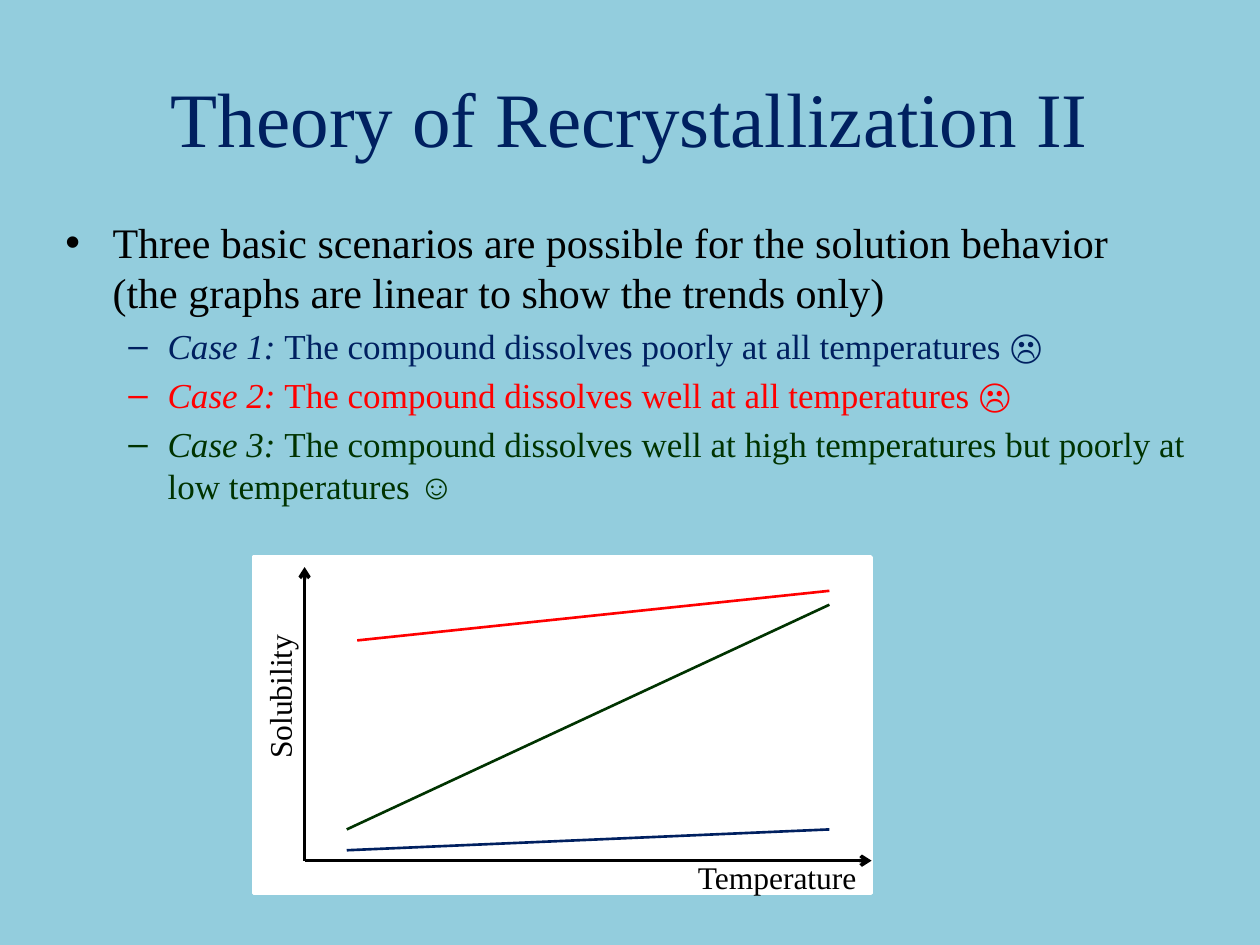
from dataclasses import dataclass

from lxml import etree
from pptx import Presentation
from pptx import util as u
from pptx.dml.color import RGBColor
from pptx.enum import shapes, text
from pptx.oxml import ns

SKY = RGBColor(0x93, 0xCD, 0xDD)
WHITE = RGBColor(0xFF, 0xFF, 0xFF)
BLACK = RGBColor(0, 0, 0)
NAVY = RGBColor(0x00, 0x20, 0x60)
RED = RGBColor(0xFF, 0, 0)
GREEN = RGBColor(0, 0x33, 0)
FONT = "Times New Roman"


@dataclass
class Line:
    """A straight line; lengths in centimetres, width in points."""
    start: tuple[float, float]
    end: tuple[float, float]
    color: RGBColor
    width: float = 1.5
    arrow: bool = False


@dataclass
class Label:
    """A text box; lengths in centimetres, size in points."""
    words: str
    area: tuple[float, float, float, float]
    size: float = 18
    color: RGBColor = BLACK
    rotation: float = 0
    wrap: bool = False


@dataclass
class Case:
    name: str
    outcome: str
    color: RGBColor


ORIGIN = (6.14, 17.35)
AXES = [
    Line(ORIGIN, (6.14, 11.43), BLACK, 2, True),
    Line(ORIGIN, (17.57, 17.35), BLACK, 2, True),
]
CURVES = [
    Line((6.99, 17.14), (16.72, 16.72), NAVY),
    Line((7.2, 12.91), (16.72, 11.91), RED),
    Line((6.99, 16.72), (16.72, 12.19), GREEN),
]
AXIS_LABELS = [
    Label("Solubility", (4.11, 13.51, 3.05, 1.02), rotation=270),
    Label("Temperature", (13.82, 17.17, 3.73, 1.02)),
]
TITLE = Label("Theory of Recrystallization II", (1.27, 0.76, 22.86, 3.18), 44, NAVY, wrap=True)
INTRO = Label(
    "Three basic scenarios are possible for the solution behavior \v"
    "(the graphs are linear to show the trends only)",
    (1.07, 4.24, 23.5, 12.7), 24, wrap=True)
CASES = [
    Case("Case 1: ", "The compound dissolves poorly at all temperatures ☹", NAVY),
    Case("Case 2: ", "The compound dissolves well at all temperatures ☹", RED),
    Case("Case 3: ", "The compound dissolves well at high temperatures "
         "but poorly at low temperatures ☺", GREEN),
]


def style_run(span, size: float, color: RGBColor, italic: bool = False) -> None:
    span.font.name = FONT
    span.font.size = u.Pt(size)
    span.font.color.rgb = color
    span.font.italic = italic


def add_label(page, label: Label):
    box = page.shapes.add_textbox(*map(u.Cm, label.area))
    box.rotation = label.rotation
    frame = box.text_frame
    frame.word_wrap = label.wrap
    frame.text = label.words
    for span in frame.paragraphs[0].runs:
        style_run(span, label.size, label.color)
    return box


def add_bullet(para, mark: str, left: float, hang: float, size: float) -> None:
    """Give the paragraph a bullet, a hanging indent and 20% space before."""
    para.space_before = u.Pt(0.2 * size)
    props = para._p.get_or_add_pPr()
    props.set("marL", str(u.Cm(left)))
    props.set("indent", str(-u.Cm(hang)))
    etree.SubElement(props, ns.qn("a:buFont")).set("typeface", "Arial")
    etree.SubElement(props, ns.qn("a:buChar")).set("char", mark)


def add_case(frame, case: Case) -> None:
    para = frame.add_paragraph()
    para.level = 1
    para.text = case.name
    para.add_run().text = case.outcome
    for span, italic in zip(para.runs, (True, False)):
        style_run(span, 20, case.color, italic)
    add_bullet(para, "–", 2.06, 0.79, 20)


def add_line(page, line: Line) -> None:
    connector = page.shapes.add_connector(
        shapes.MSO_CONNECTOR.STRAIGHT, *map(u.Cm, line.start + line.end))
    connector.line.color.rgb = line.color
    connector.line.width = u.Pt(line.width)
    if line.arrow:
        outline = connector.line._get_or_add_ln()
        etree.SubElement(outline, ns.qn("a:tailEnd")).set("type", "arrow")
    etree.SubElement(connector._element.spPr, ns.qn("a:effectLst"))


def add_graph_panel(page) -> None:
    panel = page.shapes.add_shape(
        shapes.MSO_SHAPE.RECTANGLE, *map(u.Cm, (5.11, 11.23, 12.45, 6.78)))
    panel.shadow.inherit = False
    panel.fill.solid()
    panel.fill.fore_color.rgb = WHITE
    panel.line.color.rgb = WHITE
    panel.line.width = u.Pt(2)


def main() -> None:
    deck = Presentation()
    deck.slide_width, deck.slide_height = u.Cm(25.4), u.Cm(19.05)
    page = deck.slides.add_slide(deck.slide_layouts[6])
    page.background.fill.solid()
    page.background.fill.fore_color.rgb = SKY

    add_graph_panel(page)

    title = add_label(page, TITLE).text_frame
    title.vertical_anchor = text.MSO_ANCHOR.MIDDLE
    title.paragraphs[0].alignment = text.PP_ALIGN.CENTER

    body = add_label(page, INTRO).text_frame
    add_bullet(body.paragraphs[0], "•", 0.95, 0.95, INTRO.size)
    for case in CASES:
        add_case(body, case)

    for line in AXES + CURVES:
        add_line(page, line)
    for label in AXIS_LABELS:
        add_label(page, label)

    deck.save("out.pptx")


if __name__ == "__main__":
    main()
